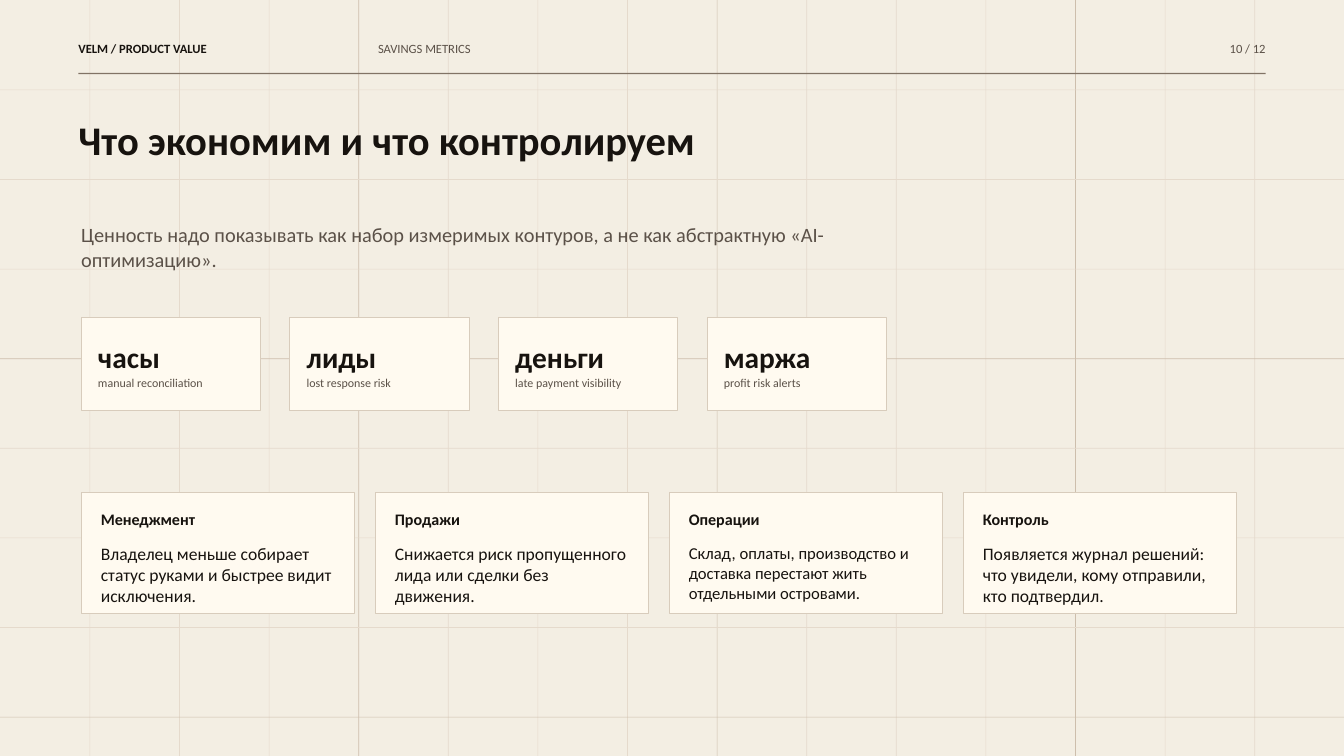
"""Build the savings metrics slide on a grid of 960 columns by 540 rows."""
from pptx import Presentation
from pptx import util as u
from pptx.dml.color import RGBColor
from pptx.enum import shapes, text

COLORS = {
    "paper": "F3EEE3",
    "card": "FFFAF0",
    "border": "D8CCBC",
    "grid": "E5DACC",
    "grid_strong": "CDBEAC",
    "rule": "817365",
    "ink": "17130F",
    "muted": "5B5148",
}
COLORS = {name: RGBColor.from_string(value) for name, value in COLORS.items()}
COLUMNS, ROWS, GRID_STEP = 960, 540, 64

presentation = Presentation()
presentation.slide_width = u.Inches(20)
presentation.slide_height = u.Inches(11.25)
cell = presentation.slide_width // COLUMNS
slide = presentation.slides.add_slide(presentation.slide_layouts[5])
slide.background.fill.solid()
slide.background.fill.fore_color.rgb = COLORS["paper"]


def add_block(left, top, width, height, fill, line_width=None):
    lengths = [int(length * cell) for length in (left, top, width, height)]
    shape = slide.shapes.add_shape(shapes.MSO_SHAPE.RECTANGLE, *lengths)
    shape.shadow.inherit = False
    shape.fill.solid()
    shape.fill.fore_color.rgb = COLORS[fill]
    if line_width:
        shape.line.color.rgb = COLORS["border"]
        shape.line.width = u.Pt(line_width)
    else:
        shape.line.fill.background()


def add_text(left, top, width, height, words, size, color="ink", bold=False,
             align=text.PP_ALIGN.LEFT, shape=None):
    lengths = [length * cell for length in (left, top, width, height)]
    if shape is None:
        shape = slide.shapes.add_textbox(*lengths)
    shape.left, shape.top, shape.width, shape.height = lengths
    frame = shape.text_frame
    frame.margin_left = frame.margin_top = frame.margin_right = frame.margin_bottom = 0
    frame.word_wrap = True
    frame.auto_size = text.MSO_AUTO_SIZE.NONE
    frame.vertical_anchor = text.MSO_ANCHOR.TOP
    paragraph = frame.paragraphs[0]
    paragraph.alignment = align
    run = paragraph.add_run()
    run.text = words
    run.font.name = "Calibri"
    run.font.size = u.Pt(size)
    run.font.bold = bold
    run.font.color.rgb = COLORS[color]


for number in range(1, COLUMNS // GRID_STEP):
    color = "grid" if number % 4 else "grid_strong"
    add_block(number * GRID_STEP, 0, 0.5, ROWS, color)
for number in range(1, ROWS // GRID_STEP + 1):
    color = "grid" if number % 4 else "grid_strong"
    add_block(0, number * GRID_STEP, COLUMNS, 0.5, color)

add_text(56, 29, 210, 14, "VELM / PRODUCT VALUE", 13.5, bold=True)
add_text(270, 29, 420, 14, "SAVINGS METRICS", 13.5, "muted")
add_text(820, 29, 84, 14, "10 / 12", 13.5, "muted", align=text.PP_ALIGN.RIGHT)
add_block(56, 52, 848, 1, "rule")

title = slide.shapes.title
title.element.getparent().append(title.element)
add_text(56, 82, 530, 69, "Что экономим и что контролируем", 43.5, bold=True, shape=title)
add_text(58, 159, 610, 39,
         "Ценность надо показывать как набор измеримых контуров, "
         "а не как абстрактную «AI-оптимизацию».", 21.8, "muted")

metrics = [
    ("часы", "manual reconciliation"),
    ("лиды", "lost response risk"),
    ("деньги", "late payment visibility"),
    ("маржа", "profit risk alerts"),
]
for index, (metric, caption) in enumerate(metrics):
    left = 58 + index * 149
    add_block(left, 227, 128, 66, "card", 0.9)
    add_text(left + 12, 242, 104, 21, metric, 31.5, bold=True)
    add_text(left + 12, 268, 104, 13, caption, 12.8, "muted")

areas = [
    ("Менеджмент", "Владелец меньше собирает статус руками и быстрее видит исключения.", 18.8),
    ("Продажи", "Снижается риск пропущенного лида или сделки без движения.", 18.8),
    ("Операции",
     "Склад, оплаты, производство и доставка перестают жить отдельными островами.", 17.8),
    ("Контроль",
     "Появляется журнал решений: что увидели, кому отправили, кто подтвердил.", 18.8),
]
for index, (heading, benefit, size) in enumerate(areas):
    left = 58 + index * 210
    add_block(left, 352, 195, 86, "card", 0.83)
    add_text(left + 14, 364, 167, 17, heading, 17.2, bold=True)
    add_text(left + 14, 388, 167, 41, benefit, size)

presentation.save("out.pptx")
